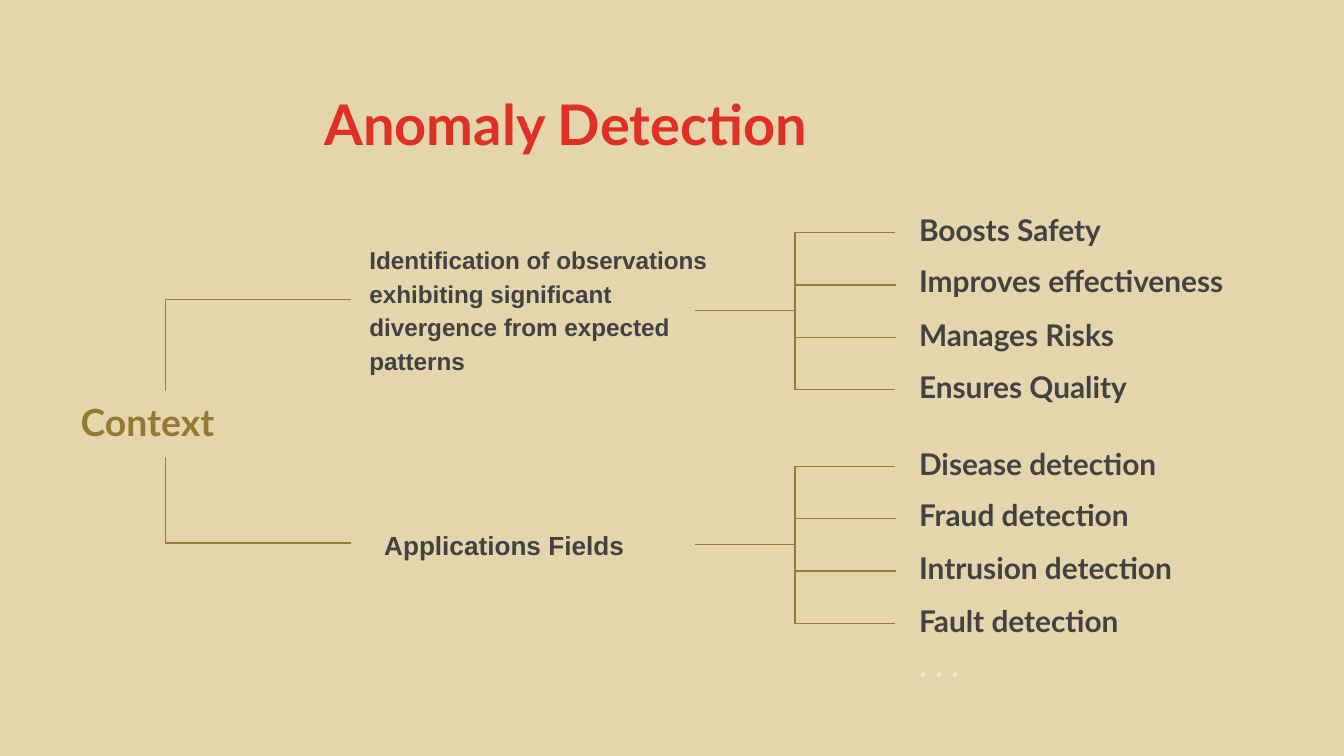
from pptx import Presentation
from pptx.dml.color import RGBColor
from pptx.enum.shapes import MSO_CONNECTOR
from pptx.enum.text import MSO_ANCHOR, MSO_AUTO_SIZE, PP_ALIGN
from pptx.oxml.ns import qn
from pptx.util import Inches, Pt
from lxml import etree

TEXT, GOLD = "424242", "947930"


def write_text(shape, box, text, size, color=TEXT, font="Lato"):
    """Place a shape and give it one bold paragraph."""
    shape.left, shape.top, shape.width, shape.height = [Inches(v) for v in box]
    frame = shape.text_frame
    frame.word_wrap = True
    frame.auto_size = MSO_AUTO_SIZE.NONE
    frame.vertical_anchor = MSO_ANCHOR.BOTTOM
    frame.margin_left = frame.margin_right = Inches(0.1)
    frame.margin_top = frame.margin_bottom = Inches(0.1)
    frame.text = text
    paragraph = frame.paragraphs[0]
    paragraph.line_spacing = 1.15
    paragraph.font.name = font
    paragraph.font.size = Pt(size)
    paragraph.font.bold = True
    paragraph.font.color.rgb = RGBColor.from_string(color)
    return frame


def add_line(kind, start, end):
    """Add a thin gold connector without a shadow."""
    line = slide.shapes.add_connector(kind, *[Inches(v) for v in start + end])
    line.line.color.rgb = RGBColor.from_string("977C31")
    line.line.width = Pt(0.75)
    etree.SubElement(line._element.spPr, qn("a:effectLst"))
    return line


# A 16:9 slide
presentation = Presentation()
presentation.slide_width = Inches(10)
presentation.slide_height = Inches(10 * 9 / 16)
slide = presentation.slides.add_slide(presentation.slide_layouts[5])
slide.background.fill.solid()
slide.background.fill.fore_color.rgb = RGBColor.from_string("E4D5AC")

# Title
title = write_text(slide.shapes.title, (0, 0.49, 8.42, 0.73),
                   "Anomaly Detection", 30, "DF3024")
title.vertical_anchor = MSO_ANCHOR.TOP
title.paragraphs[0].alignment = PP_ALIGN.CENTER

# Root and its two topics
root = write_text(slide.shapes.add_textbox(0, 0, 0, 0), (0.43, 2.91, 1.58, 0.49),
                  "Context", 20, GOLD)
root.margin_left = Inches(0.17)
topics = [
    ((2.65, 1.73, 2.88, 1.16), 13,
     "Identification of observations exhibiting significant divergence from expected patterns"),
    ((2.76, 3.83, 2.41, 0.44), 14, "Applications Fields"),
]
for box, size, text in topics:
    write_text(slide.shapes.add_textbox(0, 0, 0, 0), box, text, size, font="Arial")

# One-bend lines from the topics to the root
for topic_y, root_y in [(2.23, 2.91), (4.04, 3.4)]:
    elbow = add_line(MSO_CONNECTOR.ELBOW, (2.61, topic_y), (1.23, root_y))
    elbow._element.spPr.find(qn("a:prstGeom")).set("prst", "bentConnector2")

# Branches: outer items hang on elbows, inner items on straight lines
branches = [
    (1.73, ["Boosts Safety", "Improves effectiveness", "Manages Risks", "Ensures Quality"]),
    (3.47, ["Disease detection", "Fraud detection", "Intrusion detection", "Fault detection"]),
]
label_offsets = [-0.19, 0.19, 0.59, 0.98]
for first_y, labels in branches:
    stem_y = first_y + 0.58
    for index, (label, offset) in enumerate(zip(labels, label_offsets)):
        y = first_y + 0.39 * index
        if index in (0, len(labels) - 1):
            add_line(MSO_CONNECTOR.ELBOW, (6.66, y), (5.17, stem_y))
        else:
            add_line(MSO_CONNECTOR.STRAIGHT, (5.92, y), (6.67, y))
        write_text(slide.shapes.add_textbox(0, 0, 0, 0),
                   (6.74, first_y + offset, 2.95, 0.4), label, 16)

# Continuation dots
write_text(slide.shapes.add_textbox(0, 0, 0, 0), (6.74, 4.79, 0.63, 0.4),
           ". . .", 18, "EFE6CD")

presentation.save("out.pptx")
